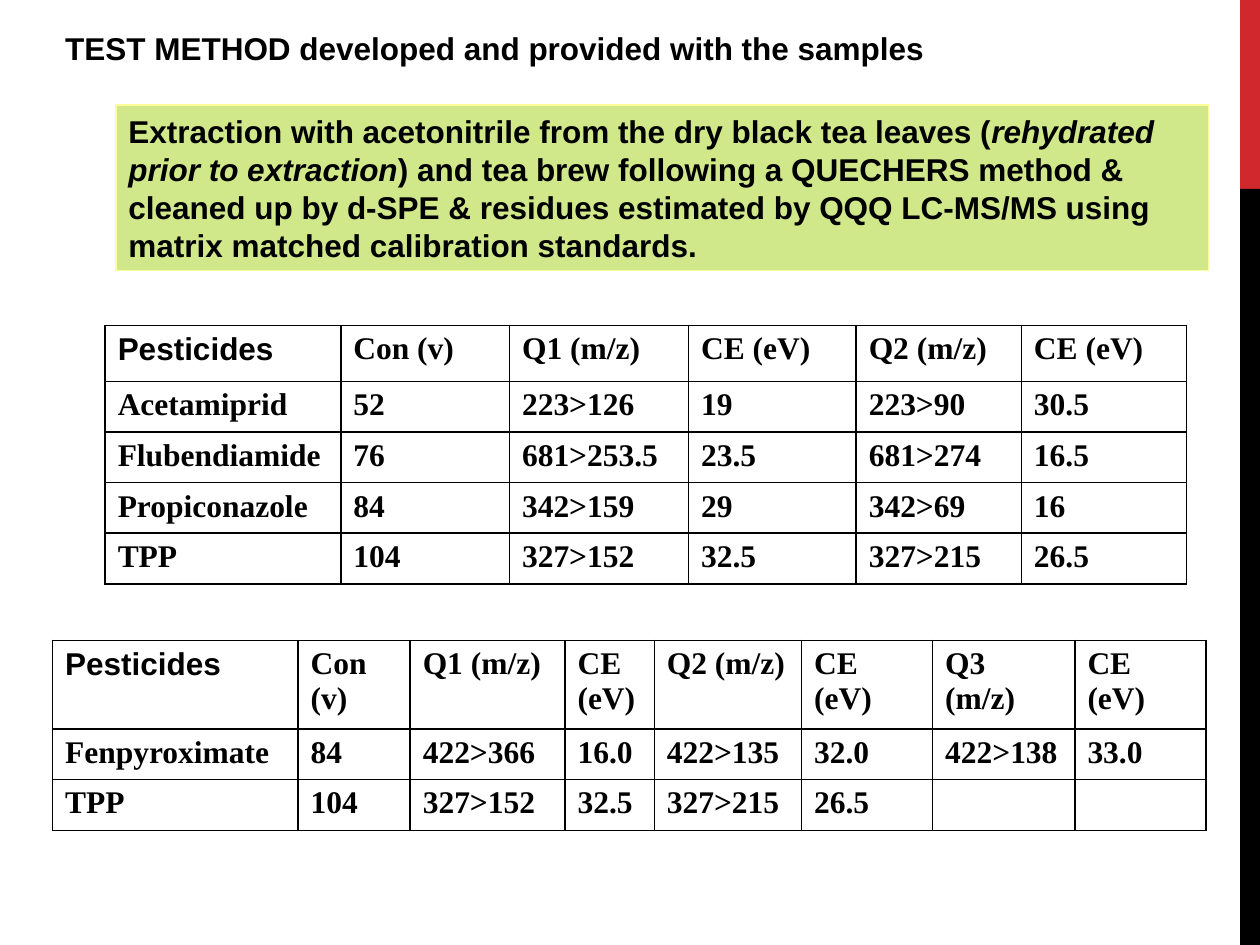
"""Build the test method slide with its two pesticide tables."""
import pptx
import pptx.dml.color
import pptx.enum.text
import pptx.oxml
import pptx.oxml.ns
import pptx.util
from pptx.util import Cm


def color(value):
    return pptx.dml.color.RGBColor.from_string(value)


def format_text(frame, font_name):
    for para in frame.paragraphs:
        for span in para.runs:
            span.font.name = font_name
            span.font.size = pptx.util.Pt(18)
            span.font.bold = True
            span.font.color.rgb = color("000000")


NAMESPACE = pptx.oxml.ns.nsdecls("a")

deck = pptx.Presentation()
deck.slide_width, deck.slide_height = Cm(25.4), Cm(19.05)
page = deck.slides.add_slide(deck.slide_layouts[5])

for top, height, fill in [(0, 3.81, "D1282E"), (3.81, 15.24, "000000")]:
    band = page.shapes.add_shape(1, Cm(25), Cm(top), Cm(0.4), Cm(height))
    band.shadow.inherit = False
    band.fill.solid()
    band.fill.fore_color.rgb = color(fill)
    band.line.fill.background()

title = page.shapes.title
title.left, title.top, title.width, title.height = Cm(1.06), Cm(0.46), Cm(18), Cm(1.02)
title.text_frame.text = "TEST METHOD developed and provided with the samples"
title.text_frame.word_wrap = False
title.text_frame.auto_size = pptx.enum.text.MSO_AUTO_SIZE.NONE
title.text_frame.vertical_anchor = pptx.enum.text.MSO_ANCHOR.TOP
title.text_frame.paragraphs[0].alignment = pptx.enum.text.PP_ALIGN.LEFT
format_text(title.text_frame, "Arial")

summary = page.shapes.add_shape(1, Cm(2.34), Cm(2.12), Cm(22.02), Cm(3.33))
summary.shadow.inherit = False
summary.fill.solid()
summary.fill.fore_color.rgb = color("99CC00")
fill_color = summary.fill._xPr.find(".//" + pptx.oxml.ns.qn("a:srgbClr"))
fill_color.append(pptx.oxml.parse_xml(f'<a:alpha {NAMESPACE} val="46000"/>'))
summary.line.color.rgb = color("FFFF99")
summary.line.width = pptx.util.Pt(0.75)
summary.text_frame.word_wrap = True
summary.text_frame.vertical_anchor = pptx.enum.text.MSO_ANCHOR.MIDDLE
para = summary.text_frame.paragraphs[0]
para.alignment = pptx.enum.text.PP_ALIGN.LEFT
for text, italic in [
    ("Extraction with acetonitrile from the dry black tea leaves (", False),
    ("rehydrated prior to extraction", True),
    (") and tea brew following a QUECHERS method & cleaned up by d-SPE & residues "
     "estimated by QQQ LC-MS/MS using matrix matched calibration standards.", False),
]:
    span = para.add_run()
    span.text = text
    span.font.italic = italic
format_text(summary.text_frame, "Arial")

tables = [
    (2.12, 6.56, [4.75, 3.4, 3.61, 3.38, 3.33, 3.33], 1.13, 1.02, [
        ["Pesticides", "Con (v)", "Q1 (m/z)", "CE (eV)", "Q2 (m/z)", "CE (eV)"],
        ["Acetamiprid", "52", "223>126", "19", "223>90", "30.5"],
        ["Flubendiamide", "76", "681>253.5", "23.5", "681>274", "16.5"],
        ["Propiconazole", "84", "342>159", "29", "342>69", "16"],
        ["TPP", "104", "327>152", "32.5", "327>215", "26.5"],
    ]),
    (1.06, 12.91, [4.95, 2.26, 3.12, 1.8, 2.97, 2.64, 2.87, 2.64], 1.79, 1.01, [
        ["Pesticides", "Con (v)", "Q1 (m/z)", "CE (eV)", "Q2 (m/z)", "CE (eV)",
         "Q3 (m/z)", "CE (eV)"],
        ["Fenpyroximate", "84", "422>366", "16.0", "422>135", "32.0", "422>138", "33.0"],
        ["TPP", "104", "327>152", "32.5", "327>215", "26.5", "", ""],
    ]),
]
for left, top, widths, header_height, row_height, rows in tables:
    heights = [header_height] + [row_height] * (len(rows) - 1)
    table = page.shapes.add_table(
        len(rows), len(widths), Cm(left), Cm(top), Cm(sum(widths)), Cm(sum(heights))
    ).table
    table.first_row = False
    table.horz_banding = False
    for column, width in zip(table.columns, widths):
        column.width = Cm(width)
    for row, height, values in zip(table.rows, heights, rows):
        row.height = Cm(height)
        for cell, value in zip(row.cells, values):
            cell.text_frame.text = value
            format_text(cell.text_frame, "Arial" if value == "Pesticides" else "Times New Roman")
            properties = cell._tc.get_or_add_tcPr()
            for edge in ["lnL", "lnR", "lnT", "lnB"]:
                properties.append(pptx.oxml.parse_xml(
                    f'<a:{edge} {NAMESPACE} w="12700"><a:solidFill>'
                    f'<a:srgbClr val="000000"/></a:solidFill></a:{edge}>'
                ))
            cell.fill.background()

deck.save("out.pptx")
